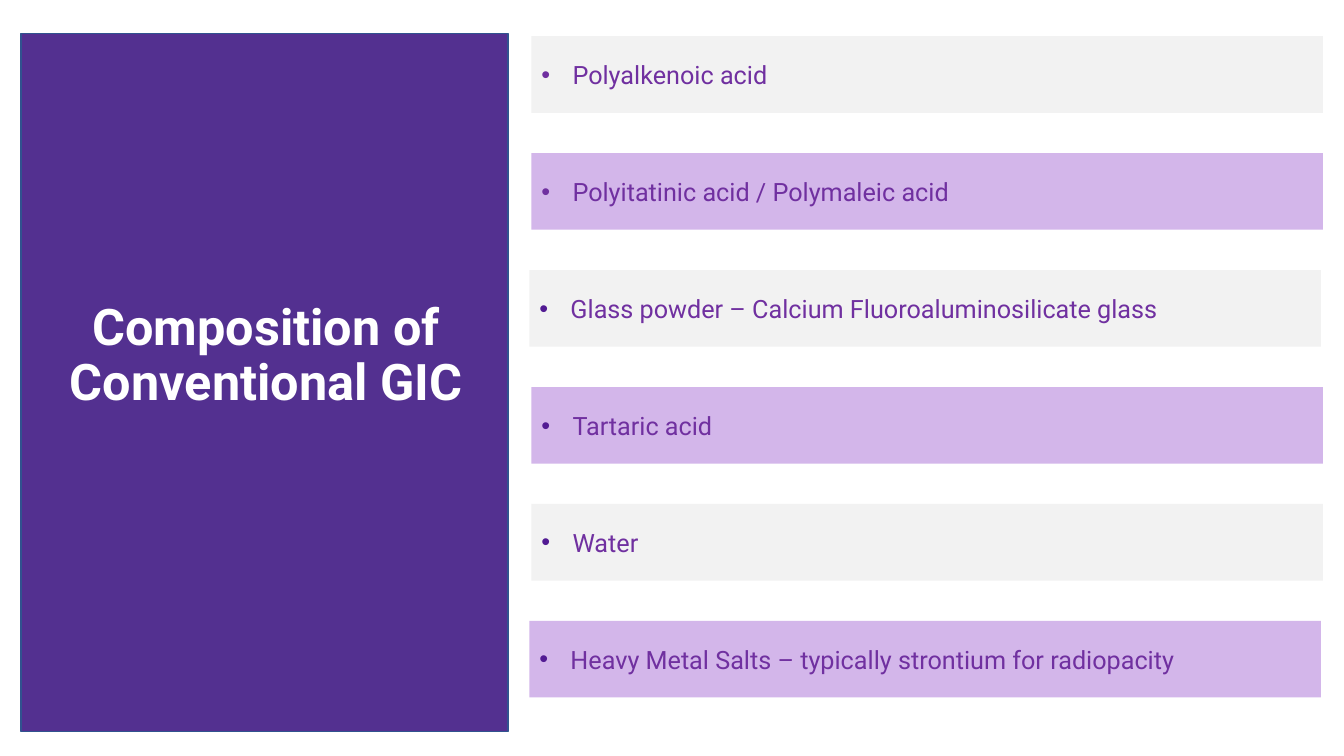
"""Build the slide listing the composition of conventional GIC."""
from dataclasses import dataclass

from lxml.etree import SubElement
from pptx import Presentation
from pptx.dml.color import RGBColor as RGB
from pptx.enum.shapes import MSO_SHAPE as SHAPE
from pptx.enum.text import MSO_ANCHOR as ANCHOR, PP_ALIGN as ALIGN
from pptx.oxml.ns import qn
from pptx.shapes.autoshape import Shape
from pptx.slide import Slide
from pptx.util import Inches, Pt

COLORS = {
    "panel": "533090",
    "panel_line": "31538F",
    "title": "FFFFFF",
    "text": "7030A0",
    "dark_bullet": "521B93",
    "gray": "F2F2F2",
    "lilac": "D3B6EA",
}
FONT = "Roboto"
BAND_TOP, BAND_PITCH = 0.36, 1.16
BAND_WIDTH, BAND_HEIGHT = 7.85, 0.76
BULLET_INDENT = Inches(0.31)


@dataclass(frozen=True)
class Ingredient:
    text: str
    left: float = 5.27
    bullet: str = "dark_bullet"


INGREDIENTS = [
    Ingredient("Polyalkenoic acid", bullet="text"),
    Ingredient("Polyitatinic acid / Polymaleic acid", bullet="text"),
    Ingredient("Glass powder – Calcium Fluoroaluminosilicate glass", left=5.25),
    Ingredient("Tartaric acid"),
    Ingredient("Water"),
    Ingredient("Heavy Metal Salts – typically strontium for radiopacity", left=5.25),
]


def add_rect(s: Slide, left: float, top: float, width: float, height: float,
             fill: str, line: str | None = None) -> Shape:
    sp = s.shapes.add_shape(SHAPE.RECTANGLE, Inches(left), Inches(top),
                            Inches(width), Inches(height))
    sp.shadow.inherit = False
    sp.fill.solid()
    sp.fill.fore_color.rgb = RGB.from_string(COLORS[fill])
    if line:
        sp.line.color.rgb = RGB.from_string(COLORS[line])
        sp.line.width = Pt(1)
    else:
        sp.line.fill.background()
    return sp


def set_text(sp: Shape, text: str, *, size: float, color: str, bold: bool = False,
             align: ALIGN = ALIGN.LEFT, anchor: ANCHOR = ANCHOR.MIDDLE,
             inset: float = 0.1, spacing: float = 1.0,
             bullet: str | None = None) -> None:
    tf = sp.text_frame
    tf.word_wrap = True
    tf.vertical_anchor = anchor
    tf.margin_left = tf.margin_right = Inches(0.1)
    tf.margin_top = tf.margin_bottom = Inches(inset)
    p = tf.paragraphs[0]
    p.alignment = align
    p.line_spacing = spacing
    r = p.add_run()
    r.text = text
    r.font.name = FONT
    r.font.size = Pt(size)
    r.font.bold = bold
    r.font.color.rgb = RGB.from_string(COLORS[color])
    if bullet:
        pPr = p._p.get_or_add_pPr()
        pPr.set("marL", str(BULLET_INDENT))
        pPr.set("indent", str(-BULLET_INDENT))
        bu_color = SubElement(pPr, qn("a:buClr"))
        SubElement(bu_color, qn("a:srgbClr"), val=COLORS[bullet])
        SubElement(pPr, qn("a:buFont"), typeface="Arial")
        SubElement(pPr, qn("a:buChar"), char="•")


def add_title_panel(s: Slide) -> None:
    add_rect(s, 0.21, 0.33, 4.83, 6.93, "panel", "panel_line")
    title = s.shapes.add_textbox(Inches(0.45), Inches(2.95), Inches(4.38), Inches(1.59))
    set_text(title, "Composition of Conventional GIC", size=36, color="title",
             bold=True, align=ALIGN.CENTER, anchor=ANCHOR.TOP, inset=0.05, spacing=0.9)


def add_ingredients(s: Slide) -> None:
    for i, item in enumerate(INGREDIENTS):
        band = add_rect(s, item.left, BAND_TOP + i * BAND_PITCH, BAND_WIDTH,
                        BAND_HEIGHT, "lilac" if i % 2 else "gray")
        set_text(band, item.text, size=18, color="text", bullet=item.bullet)


def main() -> None:
    prs = Presentation()
    prs.slide_width, prs.slide_height = Inches(13.33), Inches(7.5)
    s = prs.slides.add_slide(prs.slide_layouts[6])
    add_title_panel(s)
    add_ingredients(s)
    prs.save("out.pptx")


if __name__ == "__main__":
    main()
